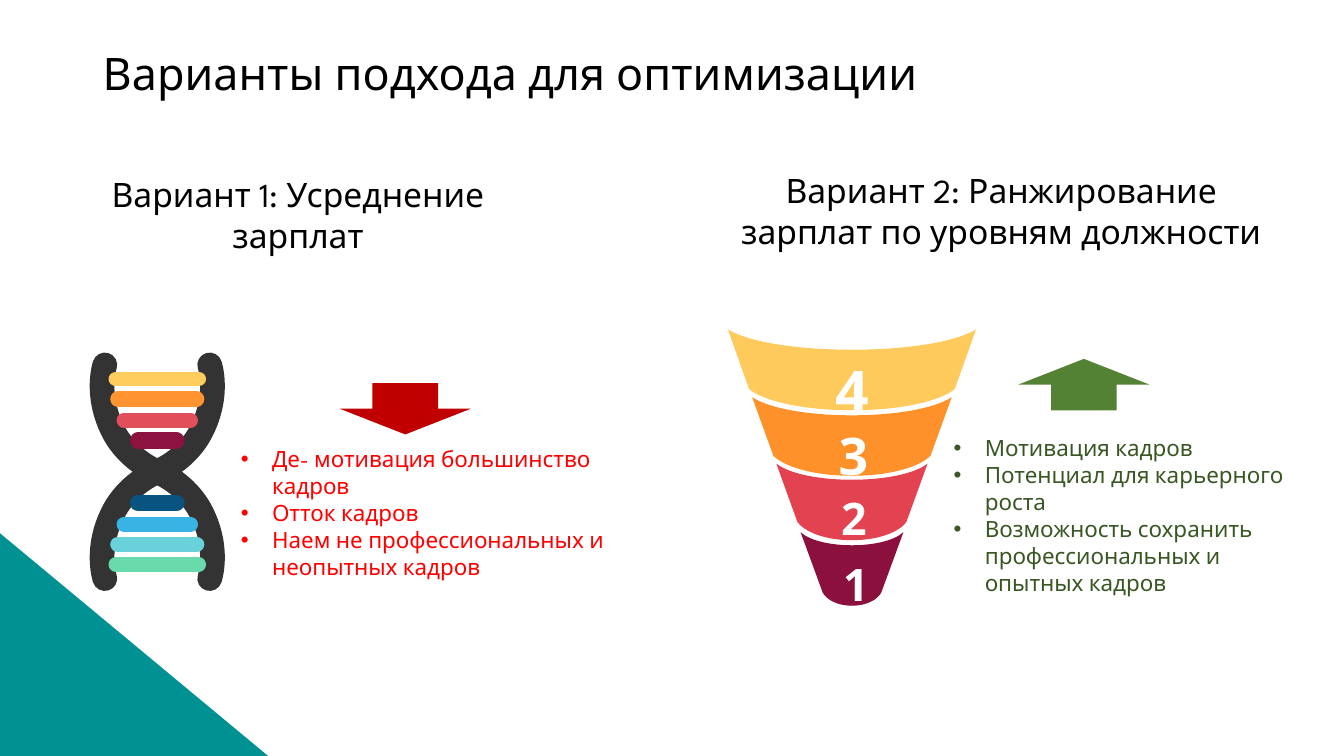
from lxml import etree
from pptx import Presentation
from pptx.dml.color import RGBColor
from pptx.enum.shapes import MSO_CONNECTOR, MSO_SHAPE
from pptx.enum.text import MSO_ANCHOR, PP_ALIGN
from pptx.oxml.ns import qn
from pptx.util import Inches, Pt

TOP, MIDDLE = MSO_ANCHOR.TOP, MSO_ANCHOR.MIDDLE
LEFT, CENTER = PP_ALIGN.LEFT, PP_ALIGN.CENTER
STRAIGHT = MSO_CONNECTOR.STRAIGHT
DOWN_ARROW, RIGHT_TRIANGLE = MSO_SHAPE.DOWN_ARROW, MSO_SHAPE.RIGHT_TRIANGLE

HELIX_X, HELIX_Y = 1.56, 4.68
# Offsets of one strand arm from the crossing: two cubic curves in a row
STRAND = [(0, 0), (0, 0), (0.29, 0.11), (0.44, 0.41),
          (0.62, 0.77), (0.52, 1.06), (0.52, 1.06)]
# Height, half length, width in points, colour
RUNGS = [
    (4.37, 0.19, 11.62, "8C133F"),
    (4.17, 0.33, 10.62, "E24E5A"),
    (3.96, 0.39, 11, "FF9430"),
    (5.4, 0.39, 11, "69D1DA"),
    (3.76, 0.41, 10.62, "FFCC5E"),
    (4.99, 0.19, 11.62, "095380"),
    (5.2, 0.33, 10.62, "39B3E3"),
    (5.6, 0.41, 10.62, "69DAAB"),
]
FUNNEL_X = 8.45
# Top, half width, sag of rim, lower half width, side drop, full drop, colour
BANDS = [
    (3.27, 1.23, 0.2, 1.02, 0.59, 0.8, "FFCA5C"),
    (3.94, 0.99, 0.18, 0.78, 0.58, 0.78, "FE912A"),
    (4.6, 0.75, 0.16, 0.54, 0.58, 0.76, "E34250"),
    (5.28, 0.51, 0.13, 0.29, 0.6, 0.73, "8B103E"),
]
# Digit, left, top, width, height, size
LEVELS = [
    ("4", 7.72, 3.52, 1.46, 0.42, 42),
    ("3", 7.98, 4.2, 0.97, 0.37, 37),
    ("2", 8.04, 4.87, 0.86, 0.32, 32),
    ("1", 8.21, 5.52, 0.56, 0.32, 32),
]


def color(value):
    return RGBColor.from_string(value)


def round_caps(shape):
    shape.line._get_or_add_ln().set("cap", "rnd")


class SlideBuilder:
    def __init__(self, slide, font):
        self.slide = slide
        self.font = font

    def text(self, lines, left, top, width, height, *, size, fill="000000", font=None,
             bold=False, align=LEFT, anchor=TOP, bullets=False, inset=True, spacing=None):
        box = self.slide.shapes.add_textbox(
            Inches(left), Inches(top), Inches(width), Inches(height))
        frame = box.text_frame
        frame.word_wrap = True
        frame.vertical_anchor = anchor
        if not inset:
            frame.margin_left = frame.margin_right = 0
            frame.margin_top = frame.margin_bottom = 0
        for index, line in enumerate(lines):
            paragraph = frame.add_paragraph() if index else frame.paragraphs[0]
            paragraph.alignment = align
            if spacing:
                paragraph.line_spacing = spacing
            if bullets:
                self.bullet(paragraph)
            run = paragraph.add_run()
            run.text = line
            run.font.name = font or self.font
            run.font.size = Pt(size)
            run.font.bold = bold
            run.font.color.rgb = color(fill)

    def bullet(self, paragraph):
        properties = paragraph._p.get_or_add_pPr()
        properties.set("marL", str(Inches(0.31)))
        properties.set("indent", str(Inches(-0.31)))
        etree.SubElement(properties, qn("a:buFont")).set("typeface", "Arial")
        etree.SubElement(properties, qn("a:buChar")).set("char", "•")

    def shape(self, kind, left, top, width, height, fill, rotation=0):
        shape = self.slide.shapes.add_shape(
            kind, Inches(left), Inches(top), Inches(width), Inches(height))
        shape.rotation = rotation
        self.paint(shape, fill)

    def paint(self, shape, fill):
        shape.shadow.inherit = False
        shape.fill.solid()
        shape.fill.fore_color.rgb = color(fill)
        shape.line.fill.background()

    def rung(self, y, half_length, width, stroke):
        connector = self.slide.shapes.add_connector(
            STRAIGHT, Inches(HELIX_X - half_length), Inches(y),
            Inches(HELIX_X + half_length), Inches(y))
        connector.line.width = Pt(width)
        connector.line.color.rgb = color(stroke)
        round_caps(connector)
        etree.SubElement(connector._element.spPr, qn("a:effectLst"))

    def curves(self, contours, close):
        """Build a freeform of cubic curves: a start, then three points a curve."""
        contours = [[(Inches(x), Inches(y)) for x, y in contour] for contour in contours]
        builder = self.slide.shapes.build_freeform(*contours[0][0])
        for index, (start, *points) in enumerate(contours):
            if index:
                builder.move_to(*start)
            builder.add_line_segments(points, close=close)
        shape = builder.convert_to_shape()
        segments = list(shape._element.iter(qn("a:lnTo")))
        for first, second, third in zip(*[iter(segments)] * 3):
            first.tag = qn("a:cubicBezTo")
            for segment in (second, third):
                first.append(segment[0])
                segment.getparent().remove(segment)
        return shape

    def strands(self, stroke, width):
        """Draw four mirrored arms that meet at the crossing."""
        shape = self.curves(
            [[(HELIX_X + side_x * x, HELIX_Y + side_y * y) for x, y in STRAND]
             for side_x in (-1, 1) for side_y in (-1, 1)], close=False)
        shape.shadow.inherit = False
        shape.fill.background()
        shape.line.color.rgb = color(stroke)
        shape.line.width = Pt(width)
        round_caps(shape)

    def band(self, top, half, sag, low_half, side_drop, drop, fill):
        corner = (low_half, side_drop)
        rim = [(0, sag), (0.42 * half, sag), (0.82 * half, 0.65 * sag), (half, 0)]
        base = [(0.88 * low_half, (side_drop + drop) / 2), (0.52 * low_half, drop), (0, drop)]
        right = rim + [corner] * 3 + base
        outline = right + [(-x, y) for x, y in reversed(right[:-1])]
        shape = self.curves([[(FUNNEL_X + x, top + y) for x, y in outline]], close=True)
        self.paint(shape, fill)


def main():
    presentation = Presentation()
    presentation.slide_width = Inches(13.33)
    presentation.slide_height = Inches(7.5)
    slide = presentation.slides.add_slide(presentation.slide_layouts[6])
    builder = SlideBuilder(slide, "League Spartan")

    builder.text(["Варианты подхода для оптимизации"], 0.92, 0.4, 11.5, 0.71,
                 size=32, anchor=MIDDLE, spacing=0.9)
    builder.strands("333333", 17.62)
    for rung in RUNGS:
        builder.rung(*rung)
    for band, (digit, left, top, width, height, size) in zip(BANDS, LEVELS):
        builder.band(*band)
        builder.text([digit], left, top, width, height, size=size, fill="FFFFFF",
                     font="Open Sans", bold=True, align=CENTER, inset=False)

    builder.text(["Вариант 1: Усреднение зарплат"], 0.63, 1.68, 4.65, 0.91,
                 size=24, align=CENTER)
    builder.shape(DOWN_ARROW, 3.37, 3.8, 1.3, 0.51, "C00000")
    builder.text(["Де- мотивация большинство кадров", "Отток кадров",
                  "Наем не профессиональных и неопытных кадров"],
                 2.29, 4.37, 4.33, 1.72, size=16, fill="FF0000", bullets=True)

    builder.text(["Вариант 2: Ранжирование зарплат по уровням должности"],
                 7.21, 1.64, 5.44, 1.31, size=24, align=CENTER)
    builder.shape(DOWN_ARROW, 10.1, 3.56, 1.3, 0.51, "548235", rotation=180)
    builder.text(["Мотивация кадров", "Потенциал для карьерного роста",
                  "Возможность сохранить профессиональных и опытных кадров"],
                 9.36, 4.26, 3.56, 1.99, size=16, fill="385723", bullets=True)
    builder.shape(RIGHT_TRIANGLE, 0, 5.29, 2.66, 2.21, "009193")
    presentation.save("out.pptx")


if __name__ == "__main__":
    main()
